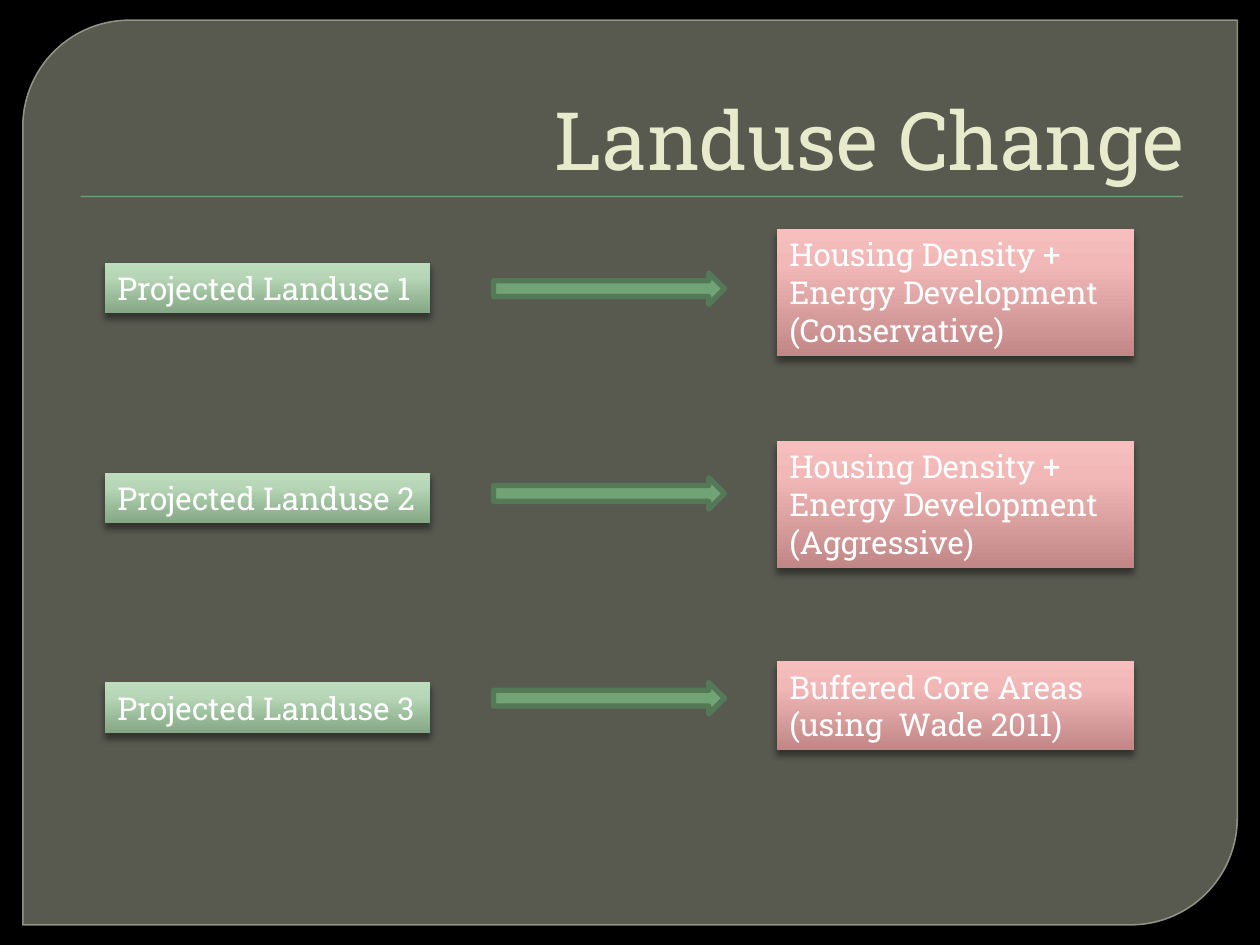
from lxml import etree
from pptx import Presentation
from pptx.dml.color import RGBColor
from pptx.enum.shapes import MSO_SHAPE
from pptx.enum.text import MSO_ANCHOR, MSO_AUTO_SIZE, PP_ALIGN
from pptx.oxml.ns import qn
from pptx.util import Pt

RECT = MSO_SHAPE.RECTANGLE
PANEL = MSO_SHAPE.ROUND_2_DIAG_RECTANGLE
ARROW = MSO_SHAPE.RIGHT_ARROW
TOP, BOTTOM = MSO_ANCHOR.TOP, MSO_ANCHOR.BOTTOM
LEFT, RIGHT = PP_ALIGN.LEFT, PP_ALIGN.RIGHT
FIT_SHAPE, NO_FIT = MSO_AUTO_SIZE.SHAPE_TO_FIT_TEXT, MSO_AUTO_SIZE.NONE

FONT = "Roboto Slab"
GREEN = [(0, "85A785"), (72, "B6D6B6"), (100, "BEDDBE")]
PINK = [(0, "C18787"), (72, "F2B8B8"), (100, "F7BEBE")]
LINE_HEIGHT, INSETS = 21.8, 7.2

# (label, box top, arrow top, outcome, outcome top, outcome lines)
ROWS = [
    ("Projected Landuse 1", 150, 156,
     "Housing Density + Energy Development (Conservative)", 131, 3),
    ("Projected Landuse 2", 270, 273,
     "Housing Density + Energy Development (Aggressive)", 252, 3),
    ("Projected Landuse 3", 390, 390,
     "Buffered Core Areas (using  Wade 2011)", 378, 2),
]


def rgb(value):
    return RGBColor.from_string(value)


def add_alpha(color_element, percent):
    etree.SubElement(color_element, qn("a:alpha"), val=str(percent * 1000))


def add_shape(s, kind, box, fill=None, line=None, width=0):
    sp = s.shapes.add_shape(kind, *(Pt(v) for v in box))
    sp.shadow.inherit = False
    if fill:
        sp.fill.solid()
        sp.fill.fore_color.rgb = rgb(fill)
    if line:
        sp.line.color.rgb = rgb(line)
        sp.line.width = Pt(width)
    else:
        sp.line.fill.background()
    return sp


def add_shadow(sp, opacity, blur, distance):
    """Cast a black shadow straight down."""
    effects = sp._element.spPr.find(qn("a:effectLst"))
    shadow = etree.SubElement(
        effects, qn("a:outerShdw"), blurRad=str(Pt(blur)),
        dist=str(Pt(distance)), dir="5400000", rotWithShape="0")
    add_alpha(etree.SubElement(shadow, qn("a:srgbClr"), val="000000"), opacity)


def set_gradient(sp, stops):
    """Fill from bottom to top with (percent, colour) stops."""
    sp.fill.gradient()
    sp.fill.gradient_angle = 90
    stop_list = next(sp._element.spPr.iter(qn("a:gsLst")))
    for old in list(stop_list):
        stop_list.remove(old)
    for percent, color in stops:
        stop = etree.SubElement(stop_list, qn("a:gs"), pos=str(percent * 1000))
        etree.SubElement(stop, qn("a:srgbClr"), val=color)


def set_text(sp, text, size, color, align, anchor, fit):
    tf = sp.text_frame
    tf.text = text
    tf.word_wrap = True
    tf.auto_size = fit
    tf.vertical_anchor = anchor
    p = tf.paragraphs[0]
    p.alignment = align
    font = p.runs[0].font
    font.name, font.size, font.color.rgb = FONT, Pt(size), rgb(color)


def add_backdrop(s, box):
    s.background.fill.solid()
    s.background.fill.fore_color.rgb = rgb("000000")
    panel = add_shape(s, PANEL, box, "888B7B", "9DA090", 0.87)
    panel.adjustments[0], panel.adjustments[1] = 0.118, 0
    fill_color, line_color = panel._element.spPr.iter(qn("a:srgbClr"))
    add_alpha(fill_color, 65)
    add_alpha(line_color, 88)
    rule = add_shape(s, RECT, (46, 112, 630, 0.72), "72A376")
    add_shadow(rule, 75, 1, 1)


def place_title(s, box):
    title = s.shapes.title
    title.left, title.top, title.width, title.height = (Pt(v) for v in box)
    set_text(title, "Landuse Change", 46, "E7EACB", RIGHT, BOTTOM, NO_FIT)
    s.shapes._spTree.append(title._element)  # in front of the backdrop


def add_label(s, left, top, width, lines, text, stops):
    height = INSETS + lines * LINE_HEIGHT
    sp = add_shape(s, RECT, (left, top, width, height))
    set_gradient(sp, stops)
    add_shadow(sp, 43, 4, 3)
    set_text(sp, text, 18, "FFFFFF", LEFT, TOP, FIT_SHAPE)


def add_row(s, label, label_top, arrow_top, outcome, outcome_top, lines):
    add_label(s, 60, label_top, 186, 1, label, GREEN)
    add_shape(s, ARROW, (282, arrow_top, 132, 18), "72A376", "547957", 3)
    add_label(s, 444, outcome_top, 204, lines, outcome, PINK)


def main():
    prs = Presentation()
    prs.slide_width, prs.slide_height = Pt(720), Pt(540)
    s = prs.slides.add_slide(prs.slide_layouts[5])
    add_backdrop(s, (13, 11.5, 694, 517))
    place_title(s, (36, 20, 648, 90))
    for row in ROWS:
        add_row(s, *row)
    prs.save("out.pptx")


if __name__ == "__main__":
    main()
